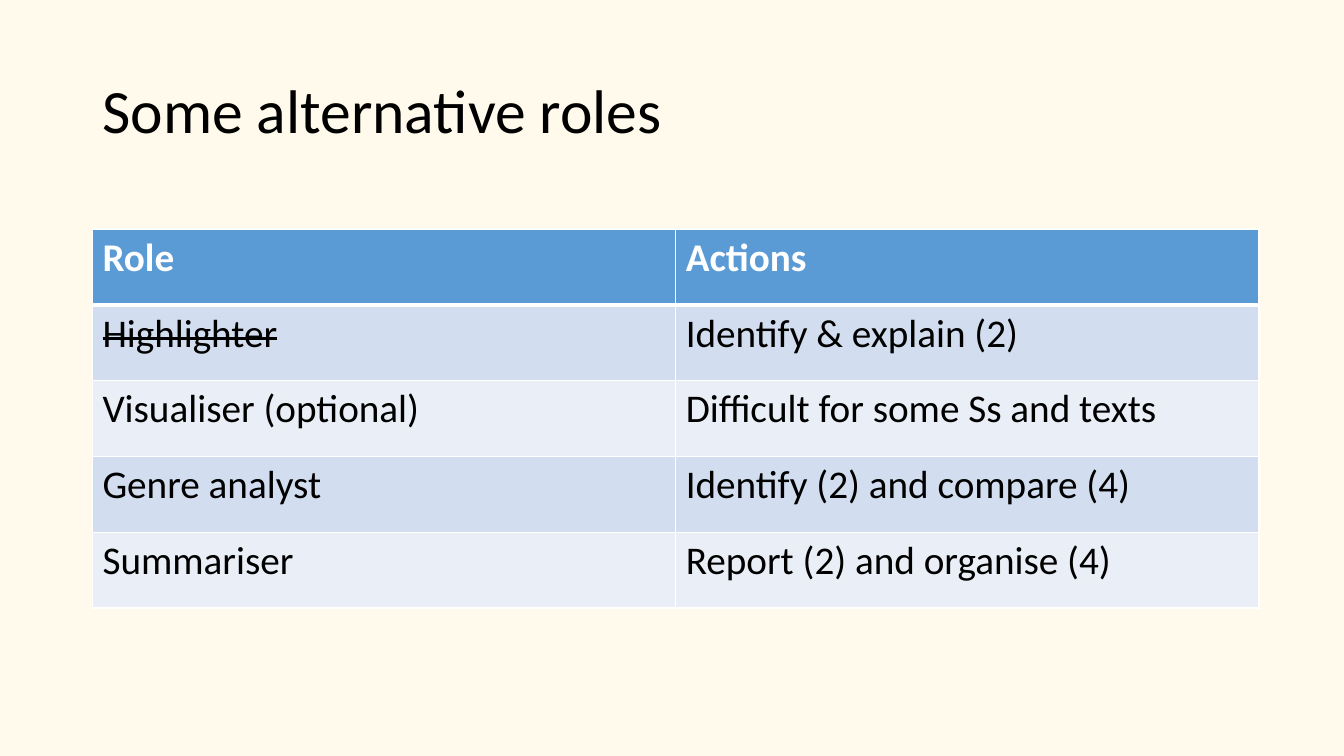
from dataclasses import dataclass

from lxml import etree
from pptx import Presentation
from pptx import util as u
from pptx.dml.color import RGBColor
from pptx.enum import text
from pptx.oxml.ns import qn


@dataclass(frozen=True)
class Theme:
    font: str = "Calibri"
    title_size: int = 44
    cell_size: int = 28
    background: str = "FFFAEB"
    ink: str = "000000"
    header_ink: str = "FFFFFF"
    header_fill: str = "5B9BD5"
    bands: tuple = ("D2DEEF", "EAEFF7")
    rule: str = "FFFFFF"
    rule_width: int = 1
    header_rule_width: int = 3


THEME = Theme()
HEADINGS = ("Role", "Actions")
ROLES = (
    ("Highlighter", "Identify & explain (2)"),
    ("Visualiser (optional)", "Difficult for some Ss and texts"),
    ("Genre analyst", "Identify (2) and compare (4)"),
    ("Summariser", "Report (2) and organise (4)"),
)
DROPPED_ROLE = "Highlighter"
MARGIN = u.Cm(2.33)
COLUMN_WIDTH = u.Cm(14.7)
ROW_HEIGHT = u.Cm(1.91)


def add_run(paragraph, wording, size, color, bold=False, strike=False):
    run = paragraph.add_run()
    run.text = wording
    run.font.name = THEME.font
    run.font.size = u.Pt(size)
    run.font.bold = bold
    run.font.color.rgb = RGBColor.from_string(color)
    if strike:
        run.font._element.set("strike", "sngStrike")


def add_title(slide, wording):
    title = slide.shapes.title
    title.left, title.top = MARGIN, u.Cm(1.01)
    title.width, title.height = u.Cm(29.21), u.Cm(3.68)
    frame = title.text_frame
    frame.word_wrap = True
    frame.auto_size = text.MSO_AUTO_SIZE.NONE
    frame.vertical_anchor = text.MSO_ANCHOR.MIDDLE
    heading = frame.paragraphs[0]
    heading.alignment = text.PP_ALIGN.LEFT
    heading.line_spacing = 0.9
    add_run(heading, wording, THEME.title_size, THEME.ink)


def set_borders(cell, top, bottom):
    """Rule all four sides; top and bottom are widths in points."""
    properties = cell._tc.get_or_add_tcPr()
    widths = {"L": THEME.rule_width, "R": THEME.rule_width, "T": top, "B": bottom}
    for side, width in widths.items():
        line = etree.SubElement(properties, qn(f"a:ln{side}"), w=str(u.Pt(width)))
        fill = etree.SubElement(line, qn("a:solidFill"))
        etree.SubElement(fill, qn("a:srgbClr"), val=THEME.rule)


def fill_cell(cell, wording, row):
    is_header = row == 0
    thin, thick = THEME.rule_width, THEME.header_rule_width
    set_borders(cell, thick if row == 1 else thin, thick if is_header else thin)
    band = THEME.header_fill if is_header else THEME.bands[(row - 1) % 2]
    cell.fill.solid()
    cell.fill.fore_color.rgb = RGBColor.from_string(band)
    add_run(
        cell.text_frame.paragraphs[0],
        wording,
        THEME.cell_size,
        THEME.header_ink if is_header else THEME.ink,
        bold=is_header,
        strike=wording == DROPPED_ROLE,
    )


def add_roles_table(slide):
    rows = (HEADINGS, *ROLES)
    roles = slide.shapes.add_table(
        len(rows), len(HEADINGS), MARGIN, u.Cm(5.77),
        COLUMN_WIDTH * len(HEADINGS), ROW_HEIGHT * len(rows),
    ).table
    for column in roles.columns:
        column.width = COLUMN_WIDTH
    for row, entries in enumerate(rows):
        roles.rows[row].height = ROW_HEIGHT
        for column, wording in enumerate(entries):
            fill_cell(roles.cell(row, column), wording, row)


def main():
    deck = Presentation()
    deck.slide_width, deck.slide_height = u.Cm(33.87), u.Cm(19.05)
    slide = deck.slides.add_slide(deck.slide_layouts.get_by_name("Title Only"))
    backdrop = slide.background.fill
    backdrop.solid()
    backdrop.fore_color.rgb = RGBColor.from_string(THEME.background)
    add_title(slide, "Some alternative roles")
    add_roles_table(slide)
    deck.save("out.pptx")


if __name__ == "__main__":
    main()
